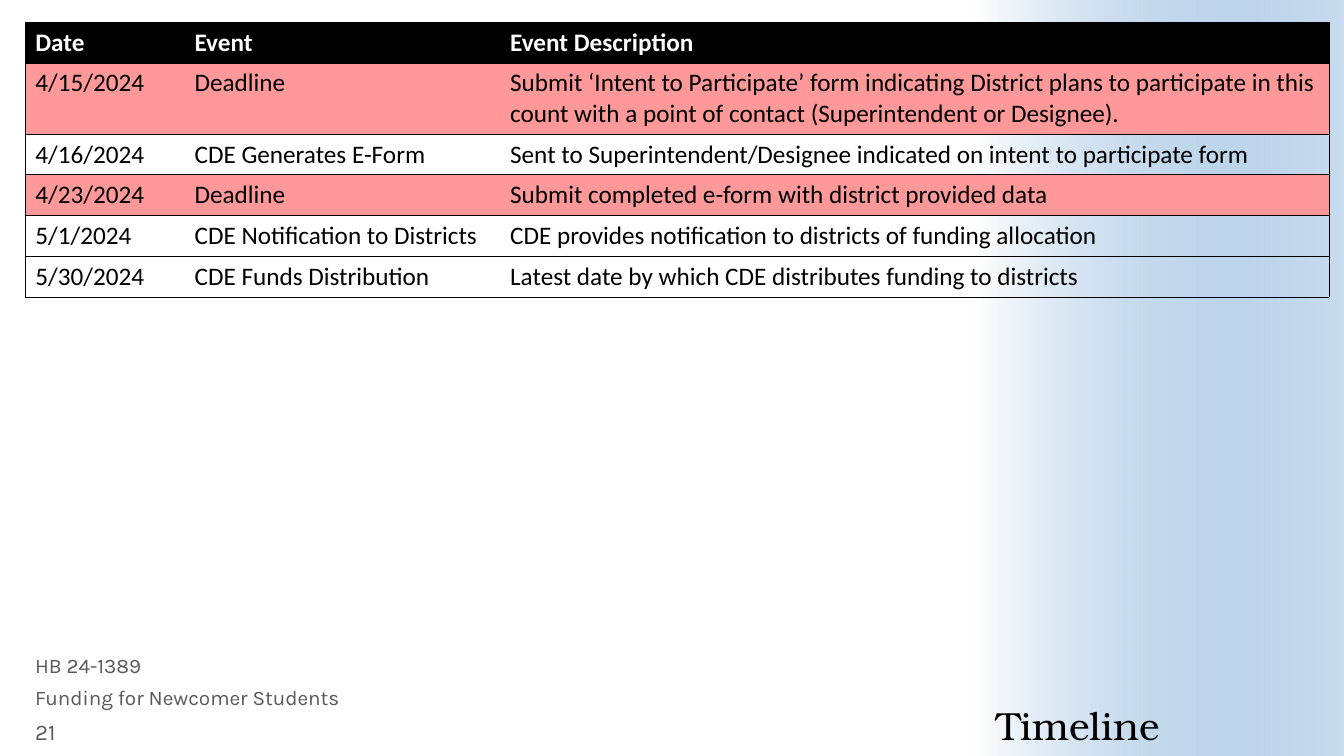
from dataclasses import dataclass

from lxml.etree import SubElement
from pptx import Presentation
from pptx.dml.color import RGBColor as Rgb
from pptx.enum.shapes import MSO_SHAPE as Shape
from pptx.enum.text import MSO_ANCHOR as Anchor, PP_ALIGN as Align
from pptx.oxml.ns import qn
from pptx.util import Inches, Pt


@dataclass(frozen=True)
class Theme:
    """Colours, fonts and type sizes of the slide."""
    white: str = "FFFFFF"
    black: str = "000000"
    grey: str = "595959"
    blue: str = "488BC9"
    deadline: str = "FF9999"
    title_font: str = "TeX Gyre Bonum"
    table_font: str = "Calibri"
    footer_font: str = "Karla"
    title_size: float = 28
    table_size: float = 18
    footer_size: float = 14.8
    number_size: float = 16
    border: float = 0.5


class SlideBuilder:
    """Draws elements on one slide, with lengths in percent of the slide's size."""

    def __init__(self, presentation, theme):
        """Add a blank slide and keep the theme."""
        self.theme = theme
        self.width = presentation.slide_width
        self.height = presentation.slide_height
        self.slide = presentation.slides.add_slide(presentation.slide_layouts[6])

    def across(self, percent):
        """Turn a share of the slide's width into a length."""
        return round(self.width * percent / 100)

    def down(self, percent):
        """Turn a share of the slide's height into a length."""
        return round(self.height * percent / 100)

    def area(self, left, top, width, height):
        """Turn four shares into a position and a size."""
        return self.across(left), self.down(top), self.across(width), self.down(height)

    def run(self, paragraph, text, font, size, color, bold=False):
        """Add one styled run to a paragraph."""
        run = paragraph.add_run()
        run.text = text
        run.font.name, run.font.size, run.font.bold = font, Pt(size), bold
        run.font.color.rgb = Rgb.from_string(color)

    def fading_panel(self, area, start, end, opacity):
        """Draw a rectangle that fades from left to right."""
        shape = self.slide.shapes.add_shape(Shape.RECTANGLE, *self.area(*area))
        shape.shadow.inherit = False
        shape.line.fill.background()
        shape.fill.gradient()
        shape.fill.gradient_angle = 0
        for stop, color in zip(shape.fill.gradient_stops, (start, end)):
            stop.color.rgb = Rgb.from_string(color)
        end_color = list(shape.element.spPr.iter(qn("a:srgbClr")))[-1]
        SubElement(end_color, qn("a:alpha"), val=str(opacity * 1000))

    def text(self, area, text, font, size, color, anchor=Anchor.TOP,
             align=Align.LEFT, spacing=1.0, inset=True):
        """Draw a text box with one paragraph."""
        frame = self.slide.shapes.add_textbox(*self.area(*area)).text_frame
        frame.word_wrap = True
        frame.vertical_anchor = anchor
        if not inset:
            frame.margin_left = frame.margin_right = 0
            frame.margin_top = frame.margin_bottom = 0
        paragraph = frame.paragraphs[0]
        paragraph.alignment = align
        paragraph.line_spacing = spacing
        self.run(paragraph, text, font, size, color)

    def borders(self, cell, sides):
        """Draw the named sides of a cell and hide the others."""
        properties = cell._tc.get_or_add_tcPr()
        for side in "LRTB":
            line = SubElement(properties, qn(f"a:ln{side}"),
                              w=str(Pt(self.theme.border)))
            if side in sides:
                fill = SubElement(line, qn("a:solidFill"))
                SubElement(fill, qn("a:srgbClr"), val=self.theme.black)
            else:
                SubElement(line, qn("a:noFill"))

    def table(self, left, top, columns, heights, rows):
        """Draw a ruled table with a dark header and tinted deadlines."""
        theme = self.theme
        area = self.area(left, top, sum(columns), sum(heights))
        table = self.slide.shapes.add_table(len(rows), len(columns), *area).table
        table.horz_banding = False
        for column, width in zip(table.columns, columns):
            column.width = self.across(width)
        for row_index, (row, height, texts) in enumerate(zip(table.rows, heights, rows)):
            row.height = self.down(height)
            header = row_index == 0
            fill = theme.black if header else theme.deadline if "Deadline" in texts else None
            for column_index, (cell, text) in enumerate(zip(row.cells, texts)):
                sides = "TB"
                sides += "L" if column_index == 0 else ""
                sides += "R" if column_index == len(columns) - 1 else ""
                self.borders(cell, sides)
                if fill:
                    cell.fill.solid()
                    cell.fill.fore_color.rgb = Rgb.from_string(fill)
                else:
                    cell.fill.background()
                self.run(cell.text_frame.paragraphs[0], text, theme.table_font,
                         theme.table_size, theme.white if header else theme.black, header)


EVENTS = [
    ("Date", "Event", "Event Description"),
    ("4/15/2024", "Deadline",
     "Submit ‘Intent to Participate’ form indicating District plans to participate "
     "in this count with a point of contact (Superintendent or Designee)."),
    ("4/16/2024", "CDE Generates E-Form",
     "Sent to Superintendent/Designee indicated on intent to participate form"),
    ("4/23/2024", "Deadline", "Submit completed e-form with district provided data"),
    ("5/1/2024", "CDE Notification to Districts",
     "CDE provides notification to districts of funding allocation"),
    ("5/30/2024", "CDE Funds Distribution",
     "Latest date by which CDE distributes funding to districts"),
]


def main():
    """Build the timeline slide and save it."""
    presentation = Presentation()
    presentation.slide_width, presentation.slide_height = Inches(13.33), Inches(7.5)
    theme = Theme()
    builder = SlideBuilder(presentation, theme)

    builder.fading_panel((72.54, 0, 27.46, 100), theme.white, theme.blue, 30)
    builder.text((31.96, 86, 54.31, 13.07), "Timeline", theme.title_font,
                 theme.title_size, theme.black, Anchor.BOTTOM, Align.RIGHT, 0.9, False)

    single, double = 5.4, 9.4
    builder.table(1.88, 2.93, [11.85, 23.48, 61.67],
                  [single, double] + [single] * 4, EVENTS)

    footer_top, footer_step, footer_height = 86.27, 4.23, 4.13
    for index, text in enumerate(("HB 24-1389", "Funding for Newcomer Students")):
        area = (1.88, footer_top + index * footer_step, 29.18, footer_height)
        builder.text(area, text, theme.footer_font, theme.footer_size, theme.grey,
                     spacing=0.8)
    builder.text((1.88, footer_top + 2 * footer_step, 6.38, footer_height), "21",
                 theme.footer_font, theme.number_size, theme.grey, Anchor.MIDDLE)

    presentation.save("out.pptx")


if __name__ == "__main__":
    main()
